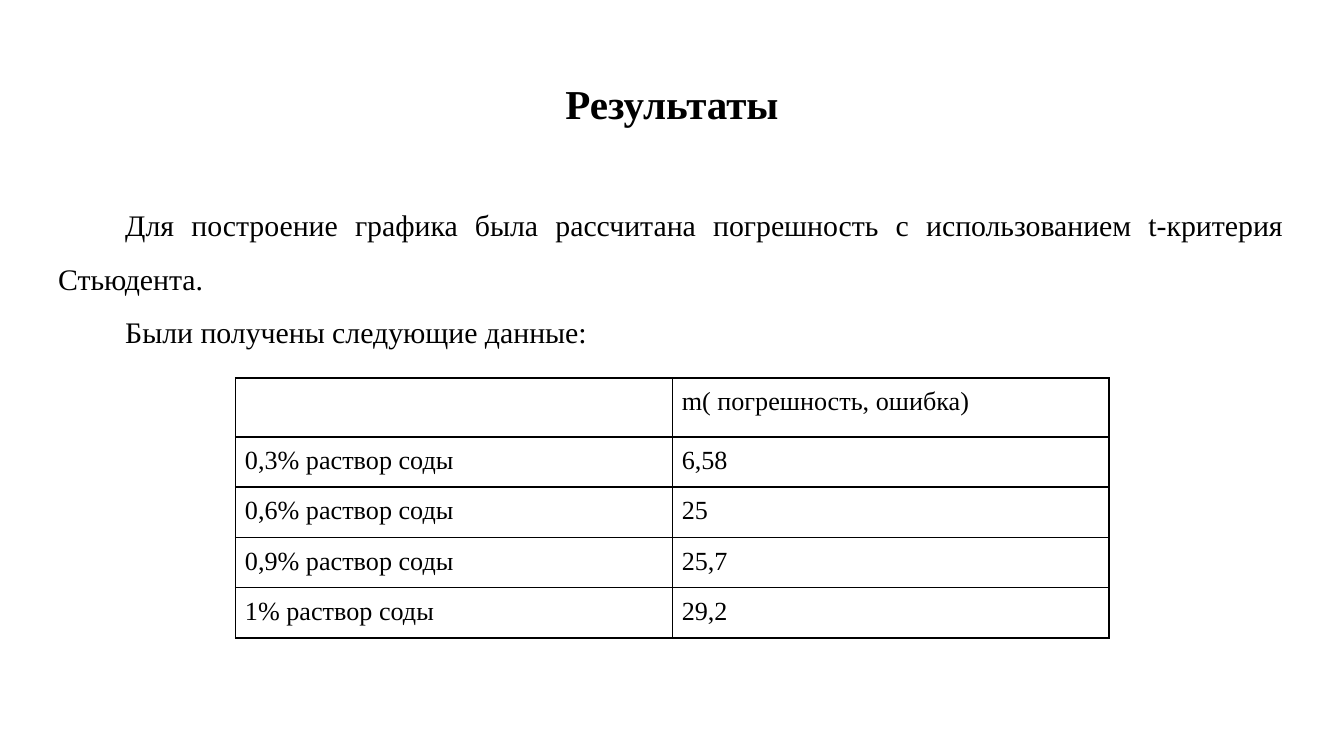
from typing import NamedTuple

from lxml import etree
from pptx import Presentation
from pptx.dml.color import RGBColor
from pptx.enum.text import MSO_ANCHOR, PP_ALIGN
from pptx.oxml.ns import qn
from pptx.util import Emu, Inches, Pt

CENTER, JUSTIFY = PP_ALIGN.CENTER, PP_ALIGN.JUSTIFY
TOP = MSO_ANCHOR.TOP
WIDTH = Inches(10)
HEIGHT = Emu(WIDTH * 9 // 16)
TITLE_ONLY = 5
FONT = "Times New Roman"
BLACK = "000000"


class Area(NamedTuple):
    """Place on the slide, in percent of its width and height."""
    left: float
    top: float
    width: float
    height: float


class Measurement(NamedTuple):
    solution: str
    error: str


TITLE_AREA = Area(3.41, 8.65, 93.18, 11.2)
INTRO_AREA = Area(3.34, 23.2, 93.18, 22.76)
TABLE_AREA = Area(17.53, 50, 65, 34.13)
HEADER_HEIGHT, ROW_HEIGHT = Inches(0.44), Inches(0.37)

INTRO = [
    "Для построение графика была рассчитана погрешность с использованием "
    "t-критерия Стьюдента.",
    "Были получены следующие данные:",
]
MEASUREMENTS = [
    Measurement("", "m( погрешность, ошибка)"),
    Measurement("0,3% раствор соды", "6,58"),
    Measurement("0,6% раствор соды", "25"),
    Measurement("0,9% раствор соды", "25,7"),
    Measurement("1% раствор соды", "29,2"),
]


def rgb(color: str) -> RGBColor:
    return RGBColor.from_string(color)


def box(area: Area) -> dict:
    return {
        "left": Emu(round(WIDTH * area.left / 100)),
        "top": Emu(round(HEIGHT * area.top / 100)),
        "width": Emu(round(WIDTH * area.width / 100)),
        "height": Emu(round(HEIGHT * area.height / 100)),
    }


def apply(target, values: dict) -> None:
    for name, value in values.items():
        setattr(target, name, value)


def margins(inset: float) -> dict:
    return {f"margin_{side}": Inches(inset)
            for side in ("left", "right", "top", "bottom")}


def write(paragraph, text: str, size: float, bold: bool = False, **layout) -> None:
    apply(paragraph, {"space_before": Pt(0), "space_after": Pt(0), **layout})
    if not text:
        return
    run = paragraph.add_run()
    run.text = text
    apply(run.font, {"name": FONT, "size": Pt(size), "bold": bold})
    run.font.color.rgb = rgb(BLACK)


def add_borders(cell, color: str, width: float) -> None:
    properties = cell._tc.get_or_add_tcPr()
    for side in ("a:lnL", "a:lnR", "a:lnT", "a:lnB"):
        line = etree.SubElement(properties, qn(side), w=str(Pt(width)))
        fill = etree.SubElement(line, qn("a:solidFill"))
        etree.SubElement(fill, qn("a:srgbClr"), val=color)


def add_title(slide, text: str) -> None:
    title = slide.shapes.title
    apply(title, box(TITLE_AREA))
    apply(title.text_frame, {**margins(0.1), "word_wrap": True,
                             "vertical_anchor": TOP})
    write(title.text_frame.paragraphs[0], text, 22, bold=True, alignment=CENTER)


def add_intro(slide, texts: list[str]) -> None:
    frame = slide.shapes.add_textbox(**box(INTRO_AREA)).text_frame
    apply(frame, {**margins(0.1), "word_wrap": True, "vertical_anchor": TOP})
    for index, text in enumerate(texts):
        paragraph = frame.add_paragraph() if index else frame.paragraphs[0]
        paragraph._p.get_or_add_pPr().set("indent", str(Inches(0.5)))
        write(paragraph, text, 16, alignment=JUSTIFY, line_spacing=1.5)


def add_results(slide, measurements: list[Measurement]) -> None:
    table = slide.shapes.add_table(
        len(measurements), len(Measurement._fields), **box(TABLE_AREA)).table
    apply(table, {"first_row": False, "horz_banding": False})
    for index, measurement in enumerate(measurements):
        table.rows[index].height = ROW_HEIGHT if index else HEADER_HEIGHT
        for cell, text in zip(table.rows[index].cells, measurement):
            apply(cell, {**margins(0.07), "vertical_anchor": TOP})
            add_borders(cell, BLACK, 1)
            cell.fill.background()
            write(cell.text_frame.paragraphs[0], text, 14, alignment=JUSTIFY)


def main() -> None:
    deck = Presentation()
    apply(deck, {"slide_width": WIDTH, "slide_height": HEIGHT})
    slide = deck.slides.add_slide(deck.slide_layouts[TITLE_ONLY])
    add_title(slide, "Результаты")
    add_intro(slide, INTRO)
    add_results(slide, MEASUREMENTS)
    deck.save("out.pptx")


if __name__ == "__main__":
    main()
